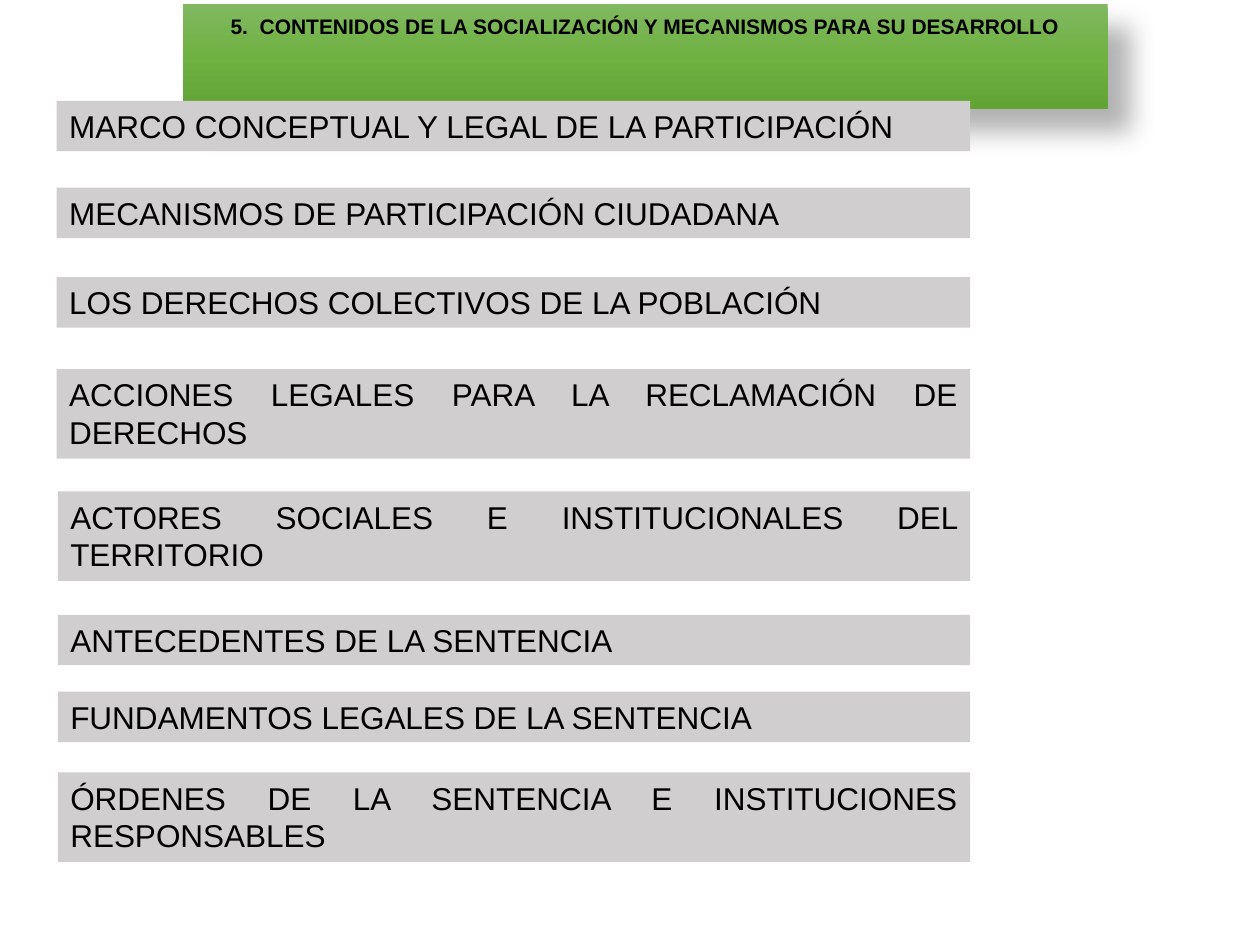
from lxml import etree
from pptx import Presentation
from pptx import util as u
from pptx.dml.color import RGBColor
from pptx.enum import shapes, text
from pptx.oxml.ns import nsdecls

WIDE, HIGH = 10, 7.5
HUES = {"ink": "000000", "bar": "D0CECE",
        "light": "81B861", "mid": "6FB242", "dark": "62A336"}
ONE, TWO = 0.4, 0.71
EDGE = 7.7
BARS = [
    (0.45, 0.8, ONE, "MARCO CONCEPTUAL Y LEGAL DE LA PARTICIPACIÓN"),
    (0.45, 1.49, ONE, "MECANISMOS DE PARTICIPACIÓN CIUDADANA"),
    (0.45, 2.2, ONE, "LOS DERECHOS COLECTIVOS DE LA POBLACIÓN"),
    (0.45, 2.93, TWO, "ACCIONES LEGALES PARA LA RECLAMACIÓN DE DERECHOS"),
    (0.46, 3.9, TWO, "ACTORES SOCIALES E INSTITUCIONALES DEL TERRITORIO"),
    (0.46, 4.88, ONE, "ANTECEDENTES DE LA SENTENCIA"),
    (0.46, 5.49, ONE, "FUNDAMENTOS LEGALES DE LA SENTENCIA"),
    (0.46, 6.13, TWO, "ÓRDENES DE LA SENTENCIA E INSTITUCIONES RESPONSABLES"),
]


def write(shape, words, size=18, bold=False, align="JUSTIFY", lead=1.0):
    """Put formatted words in a shape."""
    frame = shape.text_frame
    frame.word_wrap = True
    frame.auto_size = text.MSO_AUTO_SIZE.SHAPE_TO_FIT_TEXT
    frame.vertical_anchor = text.MSO_ANCHOR.TOP
    para = frame.paragraphs[0]
    para.alignment = text.PP_ALIGN[align]
    para.line_spacing = lead
    para.space_before = u.Pt(0)
    run = para.add_run()
    run.text = words
    font = run.font
    font.name, font.size, font.bold = "Arial", u.Pt(size), bold
    font.color.rgb = RGBColor.from_string(HUES["ink"])


class Deck:
    """Hold the style and the current slide, measured in shares of its size."""

    def __init__(self):
        """Start a deck with one title-only slide."""
        self.show = Presentation()
        self.show.slide_width, self.show.slide_height = u.Inches(WIDE), u.Inches(HIGH)
        self.slide = self.show.slides.add_slide(self.show.slide_layouts[5])

    def area(self, left, top, width, height):
        """Turn shares of the slide into lengths."""
        across, down = self.show.slide_width, self.show.slide_height
        return (round(left * across), round(top * down),
                round(width * across), round(height * down))

    def title(self, words, *box):
        """Place the title on a green gradient with a soft shadow."""
        shape = self.slide.shapes.title
        shape.left, shape.top, shape.width, shape.height = self.area(*box)
        stops = "".join(
            f'<a:gs pos="{pos}"><a:srgbClr val="{HUES[hue]}"/></a:gs>'
            for pos, hue in ((0, "light"), (50000, "mid"), (100000, "dark")))
        props = shape.element.spPr
        props.append(etree.fromstring(
            f'<a:gradFill {nsdecls("a")} rotWithShape="1"><a:gsLst>{stops}</a:gsLst>'
            '<a:lin ang="5400000" scaled="0"/></a:gradFill>'))
        props.append(etree.fromstring(
            f'<a:effectLst {nsdecls("a")}><a:outerShdw blurRad="{u.Pt(15)}" '
            f'dist="{u.Pt(18)}" dir="2700000" algn="tl" rotWithShape="0">'
            f'<a:srgbClr val="{HUES["ink"]}"><a:alpha val="30000"/></a:srgbClr>'
            '</a:outerShdw></a:effectLst>'))
        write(shape, words, size=12, bold=True, align="CENTER", lead=1.15)

    def bar(self, words, *box):
        """Add a flat grey bar with its topic."""
        shape = self.slide.shapes.add_shape(
            shapes.MSO_SHAPE.RECTANGLE, *self.area(*box))
        shape.shadow.inherit = False
        shape.fill.solid()
        shape.fill.fore_color.rgb = RGBColor.from_string(HUES["bar"])
        shape.line.fill.background()
        write(shape, words)


def main():
    """Build and save the slide."""
    deck = Deck()
    deck.title("5.  CONTENIDOS DE LA SOCIALIZACIÓN Y MECANISMOS PARA SU DESARROLLO",
               1.45 / WIDE, 0.03 / HIGH, 7.34 / WIDE, 0.33 / HIGH)
    for left, top, height, words in BARS:
        deck.bar(words, left / WIDE, top / HIGH, (EDGE - left) / WIDE, height / HIGH)
    deck.show.save("out.pptx")


if __name__ == "__main__":
    main()
